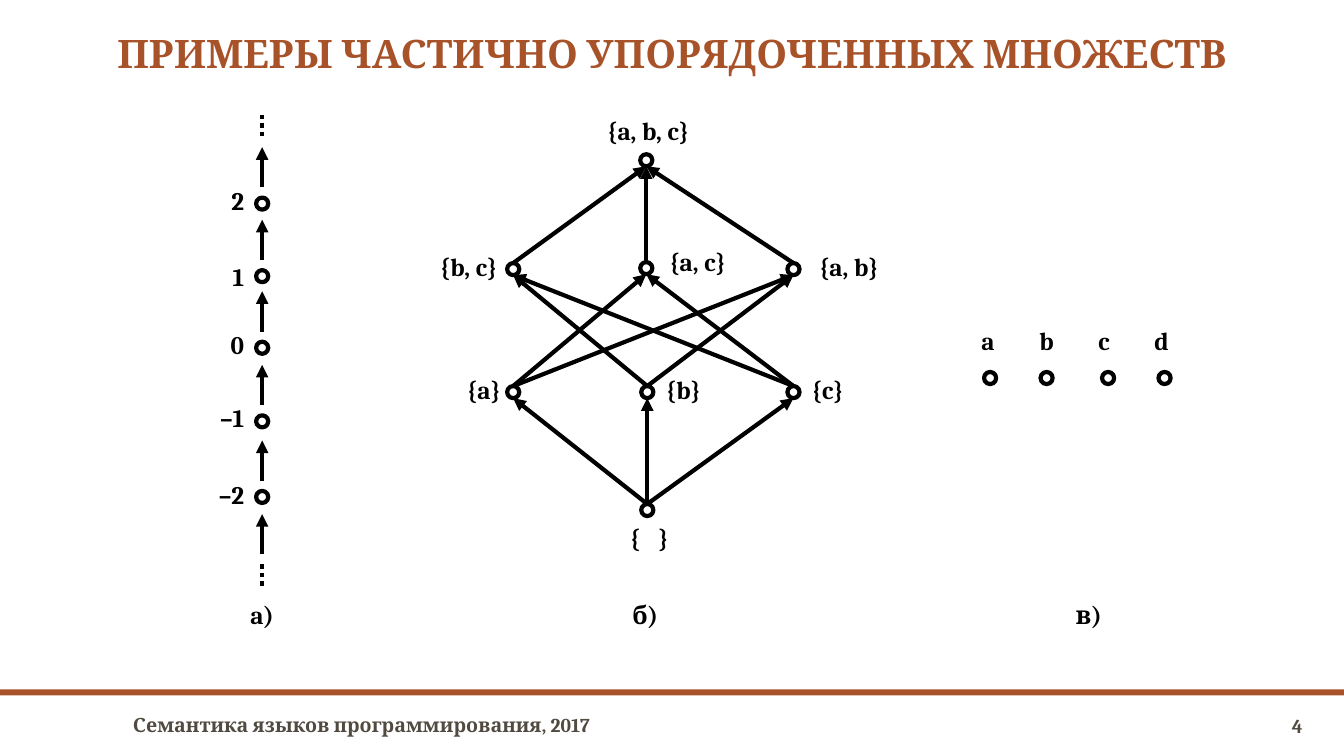
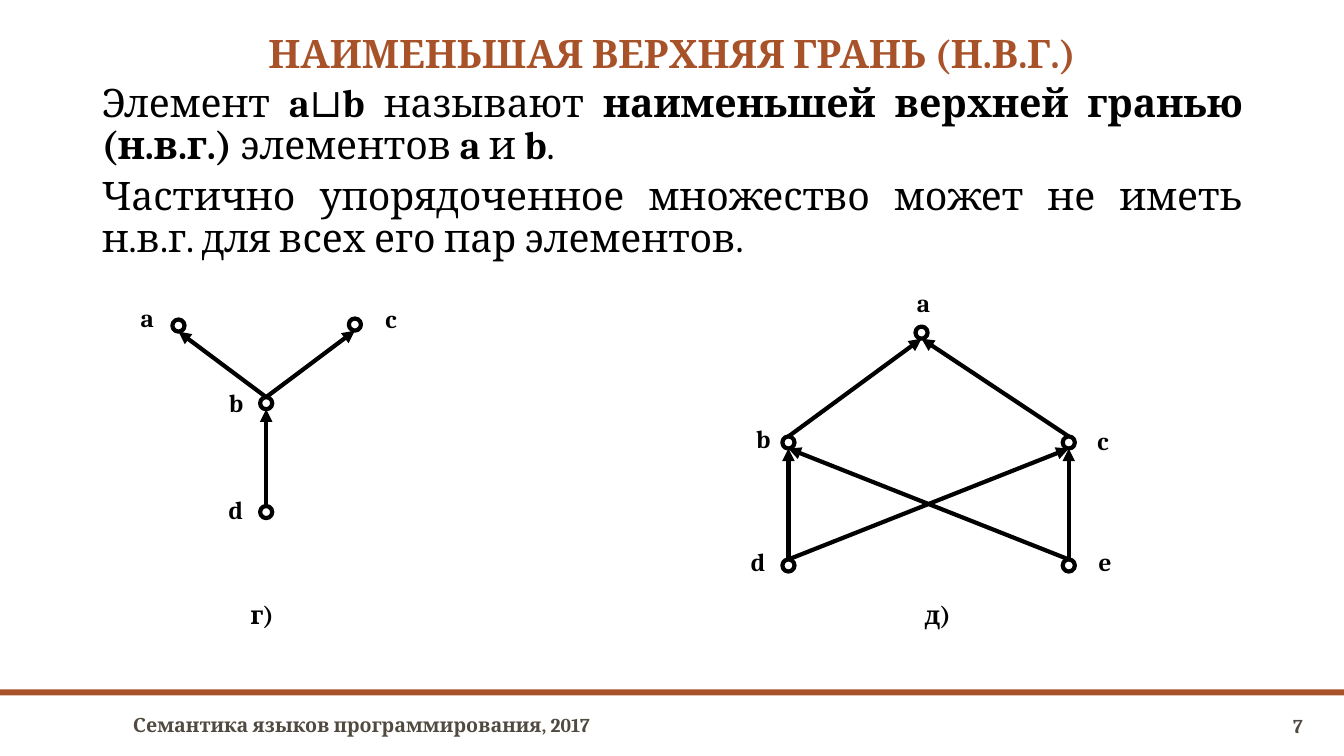
from lxml import etree
from pptx import Presentation
from pptx import util as u
from pptx.dml.color import RGBColor
from pptx.enum import dml, shapes, text
from pptx.oxml import ns

# Shared look; 100 px to the inch
PX = 9144
WIDE, HIGH = 1333, 750
FONT = "Cambria"
RUST = RGBColor(0xA8, 0x52, 0x29)
GREY = RGBColor(0x51, 0x4A, 0x40)
BLACK = RGBColor(0, 0, 0)
WHITE = RGBColor(0xFF, 0xFF, 0xFF)
FOOT = "Семантика языков программирования, 2017"
DOT = 12
LEFT, MID, RIGHT, JUST = (text.PP_ALIGN.LEFT, text.PP_ALIGN.CENTER,
                          text.PP_ALIGN.RIGHT, text.PP_ALIGN.JUSTIFY)
TOP, CORE, BASE = (text.MSO_ANCHOR.TOP, text.MSO_ANCHOR.MIDDLE,
                   text.MSO_ANCHOR.BOTTOM)

# Integer chain: label, node y, label top
CHAIN_X = 260
CHAIN = [("2", 202, 179), ("1", 274, 254), ("0", 345, 322),
         ("–1", 418, 394), ("–2", 493, 471)]
CHAIN_END = 566
CHAIN_DOTS = [(114, 136), (560, 582)]

# Graphs: name -> node x, node y, label, label centre x, label top
CUBE = {
    "abc": (641, 159, "{a, b, c}", 643, 109),
    "bc": (509, 267, "{b, c}", 465, 244),
    "ac": (641, 266, "{a, c}", 692, 239),
    "ab": (787, 267, "{a, b}", 842, 244),
    "a": (509, 389, "{a}", 480, 366),
    "b": (642, 389, "{b}", 678, 366),
    "c": (787, 389, "{c}", 821, 366),
    "": (642, 506, "{ }", 644, 513),
}
# An arrow leads to each set that has exactly one more element
CUBE_EDGES = [(low, up) for low in CUBE for up in CUBE
              if set(low) < set(up) and len(up) == len(low) + 1]

LOOSE = {
    "a": (982, 375, "a", 980, 318),
    "b": (1038, 375, "b", 1038, 318),
    "c": (1099, 375, "c", 1095, 318),
    "d": (1155, 375, "d", 1152, 318),
}
FORK = {
    "a": (177, 323, "a", 146, 295),
    "c": (352, 322, "c", 388, 296),
    "b": (264, 400, "b", 234, 379),
    "d": (264, 508, "d", 234, 485),
}
FORK_EDGES = ["db", "bc", "ba"]
CROSS = {
    "a": (914, 330, "a", 916, 280),
    "b": (782, 439, "b", 757, 415),
    "c": (1060, 439, "c", 1094, 417),
    "d": (782, 561, "d", 752, 537),
    "e": (1060, 561, "e", 1096, 537),
}
CROSS_EDGES = ["db", "dc", "ec", "eb", "ba", "ca"]

# Body paragraphs: plain and bold runs take turns
BODY = [
    ["Элемент ", "a", "⊔", "b", " называют ",
     "наименьшей верхней гранью (н.в.г.)", " элементов ", "a", " и ", "b", "."],
    ["Частично упорядоченное множество может не иметь "
     "н.в.г. для всех его пар элементов."],
]

PAGES = [
    dict(title="ПРИМЕРЫ ЧАСТИЧНО УПОРЯДОЧЕННЫХ МНОЖЕСТВ", num="4", body=None,
         chain=True, graphs=[(CUBE, CUBE_EDGES), (LOOSE, [])],
         marks=[("a)", 260), ("б)", 640), ("в)", 1080)]),
    dict(title="НАИМЕНЬШАЯ ВЕРХНЯЯ ГРАНЬ (Н.В.Г.)", num="7", body=BODY,
         chain=False, graphs=[(CROSS, CROSS_EDGES), (FORK, FORK_EDGES)],
         marks=[("г)", 260), ("д)", 930)]),
]


def write(shape, paras, size=18, color=BLACK, bold=True, align=MID,
          anchor=TOP, lead=None, gap=0, track=0):
    """Fill a shape with paragraphs, each a list of runs."""
    frame = shape.text_frame
    frame.word_wrap = True
    frame.auto_size = text.MSO_AUTO_SIZE.NONE
    frame.vertical_anchor = anchor
    for i, runs in enumerate(paras):
        para = frame.add_paragraph() if i else frame.paragraphs[0]
        props = para._p.get_or_add_pPr()
        props.set("marL", "0")
        props.set("indent", "0")
        etree.SubElement(props, ns.qn("a:buNone"))
        para.alignment = align
        para.space_before = u.Pt(gap if i else 0)
        if lead:
            para.line_spacing = lead
        for j, words in enumerate(runs):
            run = para.add_run()
            run.text = words
            font = run.font
            font.name, font.size = FONT, u.Pt(size)
            font.bold = bold or j % 2 == 1
            font.color.rgb = color
            if track:
                run._r.get_or_add_rPr().set("spc", str(track))


def place(shape, x, y, w, h):
    shape.left, shape.top, shape.width, shape.height = (
        v * PX for v in (x, y, w, h))


def label(slide, words, x, y, w, h=40, **fmt):
    box = slide.shapes.add_textbox(x * PX, y * PX, w * PX, h * PX)
    write(box, [[words]], **fmt)


def tag(slide, words, mid, top, **fmt):
    """Short label centred on mid."""
    w = 40 + 10 * len(words)
    label(slide, words, mid - w // 2, top, w, **fmt)


def node(slide, x, y):
    dot = slide.shapes.add_shape(
        shapes.MSO_SHAPE.OVAL, (x - DOT // 2) * PX, (y - DOT // 2) * PX,
        DOT * PX, DOT * PX)
    dot.shadow.inherit = False
    dot.fill.solid()
    dot.fill.fore_color.rgb = WHITE
    dot.line.color.rgb = BLACK
    dot.line.width = u.Pt(3)
    return dot


def line(slide, x1, y1, x2, y2, head=True):
    link = slide.shapes.add_connector(
        shapes.MSO_CONNECTOR.STRAIGHT, x1 * PX, y1 * PX, x2 * PX, y2 * PX)
    link.line.color.rgb = BLACK
    link.line.width = u.Pt(3)
    if head:
        etree.SubElement(link.line._get_or_add_ln(), ns.qn("a:tailEnd"),
                         type="triangle")
    else:
        link.line.dash_style = dml.MSO_LINE.ROUND_DOT
    etree.SubElement(link._element.spPr, ns.qn("a:effectLst"))
    return link


def graph(slide, nodes, edges):
    dots = {}
    for name, (x, y, words, mid, top) in nodes.items():
        dots[name] = node(slide, x, y)
        tag(slide, words, mid, top, track=450 if words == "{ }" else 0)
    for low, up in edges:
        (x1, y1), (x2, y2) = nodes[low][:2], nodes[up][:2]
        link = line(slide, x1, y1 - DOT // 2, x2, y2 + DOT // 2)
        link.begin_connect(dots[low], 0)


def chain(slide):
    for words, y, top in CHAIN:
        node(slide, CHAIN_X, y)
        label(slide, words, CHAIN_X - 70, top, 62, align=RIGHT)
    for y in [y for _, y, _ in CHAIN] + [CHAIN_END]:
        line(slide, CHAIN_X, y - 16, CHAIN_X, y - 56)
    for y1, y2 in CHAIN_DOTS:
        line(slide, CHAIN_X, y1, CHAIN_X, y2, head=False)


def frame(slide, title, num):
    """Title, band and footer, alike on every slide."""
    place(slide.shapes.title, 84, 29, 1165, 52)
    write(slide.shapes.title, [[title]], size=28, color=RUST, anchor=BASE,
          lead=0.9)
    band = slide.shapes.add_shape(shapes.MSO_SHAPE.RECTANGLE,
                                  0, 684 * PX, WIDE * PX, 6 * PX)
    band.shadow.inherit = False
    band.fill.solid()
    band.fill.fore_color.rgb = RUST
    band.line.fill.background()
    foot = dict(size=14, color=GREY, anchor=CORE)
    label(slide, FOOT, 122, 702, 1008, 34, align=LEFT, **foot)
    label(slide, num, 1226, 707, 76, 26, align=RIGHT, **foot)


def main():
    deck = Presentation()
    deck.slide_width, deck.slide_height = WIDE * PX, HIGH * PX
    for page in PAGES:
        slide = deck.slides.add_slide(deck.slide_layouts[1 if page["body"] else 5])
        frame(slide, page["title"], page["num"])
        if page["body"]:
            body = slide.placeholders[1]
            place(body, 91, 78, 1152, 554)
            write(body, page["body"], size=28, bold=False, align=JUST,
                  lead=0.9, gap=6)
        if page["chain"]:
            chain(slide)
        for nodes, edges in page["graphs"]:
            graph(slide, nodes, edges)
        for words, mid in page["marks"]:
            tag(slide, words, mid, 590)
    deck.save("out.pptx")


if __name__ == "__main__":
    main()
